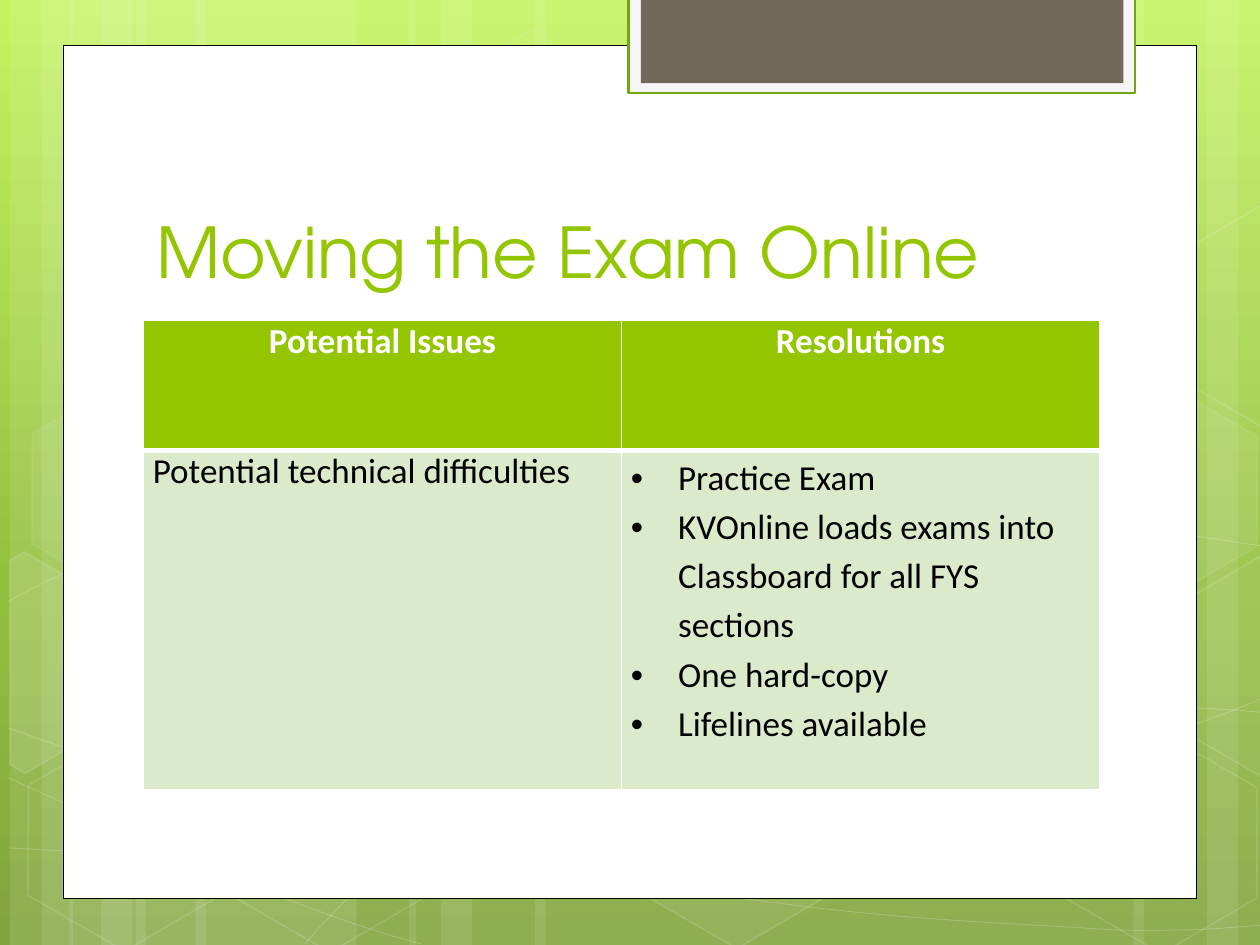
from copy import deepcopy
from dataclasses import dataclass

from lxml import etree
from pptx import Presentation
from pptx.dml.color import RGBColor
from pptx.enum.shapes import MSO_SHAPE
from pptx.enum.text import MSO_ANCHOR, PP_ALIGN
from pptx.oxml.ns import qn
from pptx.util import Cm, Pt

RECTANGLE, HEXAGON = MSO_SHAPE.RECTANGLE, MSO_SHAPE.HEXAGON
BOTTOM, CENTER, LEFT = MSO_ANCHOR.BOTTOM, PP_ALIGN.CENTER, PP_ALIGN.LEFT


@dataclass(frozen=True)
class Theme:
    sky: tuple = ((0, "C3F35F"), (0.62, "93BF3F"), (1, "81A53E"))
    white: str = "FFFFFF"
    black: str = "000000"
    green: str = "94C600"
    pale_green: str = "DCEACC"
    dark_green: str = "74A510"
    mist: str = "F5F5F5"
    brown: str = "71685A"
    title_font: str = "TeX Gyre Adventor"
    body_font: str = "Calibri"
    title_size: int = 40
    body_size: int = 20


@dataclass(frozen=True)
class Box:
    left: int
    top: int
    width: int
    height: int


THEME = Theme()

CURVES = [
    [(0.7, 67.3), (6.1, 67.6), (11.5, 67.9), (19, 67.8), (26.5, 67.7), (35.8, 67.5), (45.8, 66.5),
     (55.8, 65.5), (70, 63.6), (79.2, 61.7), (88.3, 59.8), (97.7, 56.8), (100.7, 55.1)],
    [(0.7, 47.7), (3.6, 46.1), (6.5, 44.6), (12.1, 43.1), (17.8, 41.6), (25.9, 39.4), (34.7, 38.7),
     (43.6, 38), (54.4, 37.9), (65.4, 38.7), (76.4, 39.5), (94.7, 42.6), (100.7, 43.4)],
    [(0.6, 61.7), (12.7, 67.2), (24.7, 72.7), (33.4, 74.9)],
    [(0.7, 57.8), (3.8, 58.9), (7, 60), (12.8, 61.6), (18.6, 63.1), (27.3, 65.6), (35.7, 67.3),
     (44, 69), (54.5, 70.8), (62.8, 71.8), (71.1, 72.9), (80, 73.3), (85.3, 73.6),
     (90.5, 74), (91.9, 73.8), (94.5, 73.8), (97.1, 73.7), (98.9, 73.5), (100.7, 73.4)],
    [(24.2, 74.9), (26, 72.9), (27.8, 70.9), (30.2, 69.1), (32.6, 67.3), (36, 65.3), (38.8, 63.9),
     (41.6, 62.5), (43.3, 61.9), (47, 60.9), (50.6, 59.9), (57.3, 58.5), (60.8, 57.8),
     (64.4, 57.1), (64.9, 57.1), (68, 56.9), (71.1, 56.6), (76, 56.3), (79.4, 56.2),
     (82.9, 56.1), (88.6, 56.2), (88.6, 56.2), (95.3, 56.2),
     (97.1, 56.3), (98.8, 56.4), (99.7, 56.5), (100.6, 56.6), (100.3, 56.5), (100.6, 56.6)],
]
STRAIGHT_ENDS = {(95.3, 56.2)}
HEXAGONS = [
    (33.4, 3.6, 4, 8), (49.7, 58.9, 6, 12), (1.1, 59.1, 0, 12), (1.4, 31.2, 7, 8), (17.4, 59.2, 0, 12),
    (75.3, 45.3, 10, 12), (83.4, 59.3, 0, 12), (83.4, 31.4, 7, 8),
]
CUT_HEXAGONS = [
    ([(0.8, 44.5), (1.9, 43.8), (9.6, 48.2), (9.5, 57), (2, 61.4), (0.8, 60.7)], 10),
    ([(92.6, 48.5), (100.1, 44.1), (100.9, 44.6), (100.9, 61.3), (100.2, 61.7), (92.6, 57.3)], 4),
    ([(92.6, 20.7), (100.1, 16.3), (101, 16.8), (100.9, 33.5), (100.2, 33.9), (92.6, 29.5)], 0),
]


def paint(shape, fill=None, line=None, width=1, fill_opacity=100, line_opacity=100):
    shape.shadow.inherit = False
    if fill and fill_opacity:
        shape.fill.solid()
        shape.fill.fore_color.rgb = RGBColor.from_string(fill)
    else:
        shape.fill.background()
    if line:
        shape.line.color.rgb = RGBColor.from_string(line)
        shape.line.width = Pt(width)
    else:
        shape.line.fill.background()
    for parent, opacity in (("", fill_opacity), ("a:ln/", line_opacity)):
        color = shape.element.spPr.find(
            f"{parent}a:solidFill/a:srgbClr", {"a": etree.QName(qn("a:ln")).namespace})
        if color is not None and opacity < 100:
            etree.SubElement(color, qn("a:alpha"), val=str(opacity * 1000))


def add_rectangle(slide, box, **look):
    shape = slide.shapes.add_shape(RECTANGLE, box.left, box.top, box.width, box.height)
    paint(shape, **look)


def add_outline(slide, box, points, close):
    unit = box.width / 100
    start, *rest = [(box.left + x * unit, box.top + y * unit) for x, y in points]
    builder = slide.shapes.build_freeform(*start)
    builder.add_line_segments(rest, close=close)
    return builder.convert_to_shape()


def add_curve(slide, box, knots):
    shape = add_outline(slide, box, knots, False)
    segments = list(shape.element.spPr.iter(qn("a:lnTo")))
    index = 0
    while index < len(segments):
        if knots[index + 1] in STRAIGHT_ENDS:
            index += 1
            continue
        first, *others = segments[index:index + 3]
        curve = etree.Element(qn("a:cubicBezTo"))
        first.addprevious(curve)
        for segment in (first, *others):
            curve.append(segment[0])
            segment.getparent().remove(segment)
        index += 3
    paint(shape, line=THEME.white, width=0.5, line_opacity=20)


def fill_background(slide):
    fill = slide.background.fill
    fill.gradient()
    fill.gradient_angle = 270
    stop_list = slide.element.find(".//" + qn("a:gsLst"))
    stop_list.append(deepcopy(stop_list[-1]))
    for stop, (position, color) in zip(fill.gradient_stops, THEME.sky):
        stop.position = position
        stop.color.rgb = RGBColor.from_string(color)


def draw_stripes(slide, box):
    for origin, wide, mirrored in ((0.2, 4.45, False), (1.4, 4.45, False),
                                   (-0.2, 4.45, True), (8.25, 7.82, False)):
        for offset, width in ((2.54, wide), (0, 1.27), (0.64, 2.11)):
            left = box.left + Cm(origin + offset)
            if mirrored:
                left = box.left + box.width - Cm(origin + offset + width)
            add_rectangle(slide, Box(left, box.top, Cm(width), box.height),
                          fill=THEME.white, fill_opacity=10)


def draw_pattern(slide, box):
    for knots in CURVES:
        add_curve(slide, box, knots)
    unit = box.width / 100
    for x, y, fill_opacity, line_opacity in HEXAGONS:
        shape = slide.shapes.add_shape(HEXAGON, int(box.left + x * unit), int(box.top + y * unit),
                                       Cm(4.45), Cm(3.86))
        shape.adjustments[0] = 0.285
        shape.rotation = 30
        paint(shape, THEME.white, THEME.white, 1, fill_opacity, line_opacity)
    for points, opacity in CUT_HEXAGONS:
        shape = add_outline(slide, box, points, True)
        paint(shape, THEME.white, THEME.white, 1, opacity, 12)


def draw_panel(slide, box):
    add_rectangle(slide, box, fill=THEME.white, line=THEME.black, width=0.5)
    tab_top = box.top - Cm(0.96)
    add_rectangle(slide, Box(box.left + Cm(11.4), tab_top, Cm(10.21), Cm(1.93)),
                  fill=THEME.mist, line=THEME.dark_green, width=1.25)
    add_rectangle(slide, Box(box.left + Cm(11.65), tab_top, Cm(9.73), Cm(1.73)), fill=THEME.brown)


def format_text(paragraph, font, size, color, bold=False):
    for run in paragraph.runs:
        run.font.name = font
        run.font.size = Pt(size)
        run.font.bold = bold
        run.font.color.rgb = RGBColor.from_string(color)


def draw_title(slide, box, text):
    text_frame = slide.shapes.add_textbox(box.left, box.top, box.width, box.height).text_frame
    text_frame.word_wrap = True
    text_frame.vertical_anchor = BOTTOM
    text_frame.text = text
    format_text(text_frame.paragraphs[0], THEME.title_font, THEME.title_size, THEME.green)


def format_cell(cell, lines, fill, color, is_header):
    properties = cell._tc.get_or_add_tcPr()
    widths = {"L": 1, "R": 1, "T": 1 if is_header else 3, "B": 3 if is_header else 1}
    for side, width in widths.items():
        border = etree.SubElement(properties, qn(f"a:ln{side}"), w=str(Pt(width)))
        etree.SubElement(etree.SubElement(border, qn("a:solidFill")), qn("a:srgbClr"), val=THEME.white)
    cell.fill.solid()
    cell.fill.fore_color.rgb = RGBColor.from_string(fill)
    cell.margin_left = cell.margin_right = Cm(0.19)
    cell.margin_top = cell.margin_bottom = 0
    cell.text_frame.text = "\n".join(lines)
    for paragraph in cell.text_frame.paragraphs:
        paragraph.alignment = CENTER if is_header else LEFT
        format_text(paragraph, THEME.body_font, THEME.body_size, color, is_header)
        if len(lines) > 1:
            paragraph.line_spacing = 1.15
            paragraph_properties = paragraph._p.get_or_add_pPr()
            paragraph_properties.set("marL", str(Cm(0.95)))
            paragraph_properties.set("indent", str(-Cm(0.95)))
            etree.SubElement(paragraph_properties, qn("a:buFont"), typeface="Arial")
            etree.SubElement(paragraph_properties, qn("a:buChar"), char="•")
    if len(lines) > 1:
        cell.text_frame.paragraphs[-1].space_after = Pt(10)


def draw_issue_table(slide, box, rows):
    table = slide.shapes.add_table(len(rows), len(rows[0]), box.left, box.top, box.width, box.height).table
    table.horz_banding = False
    table.rows[0].height = Cm(2.63)
    table.rows[1].height = box.height - Cm(2.63)
    for row_index, row in enumerate(rows):
        is_header = row_index == 0
        fill, color = (THEME.green, THEME.white) if is_header else (THEME.pale_green, THEME.black)
        for column_index, lines in enumerate(row):
            format_cell(table.cell(row_index, column_index), lines, fill, color, is_header)


def main():
    presentation = Presentation()
    presentation.slide_width, presentation.slide_height = Cm(25.4), Cm(19.05)
    slide = presentation.slides.add_slide(presentation.slide_layouts[6])
    page = Box(0, 0, presentation.slide_width, presentation.slide_height)
    fill_background(slide)
    draw_stripes(slide, page)
    draw_pattern(slide, page)
    draw_panel(slide, Box(Cm(1.27), Cm(0.91), Cm(22.86), Cm(17.2)))
    draw_title(slide, Box(Cm(2.9), Cm(2.84), Cm(19.51), Cm(3.18)), "Moving the Exam Online")
    draw_issue_table(slide, Box(Cm(2.89), Cm(6.45), Cm(19.28), Cm(9.47)), [
        [["Potential Issues"], ["Resolutions"]],
        [["Potential technical difficulties"],
         ["Practice Exam", "KVOnline loads exams into Classboard for all FYS sections",
          "One hard-copy", "Lifelines available"]],
    ])
    presentation.save("out.pptx")


if __name__ == "__main__":
    main()
